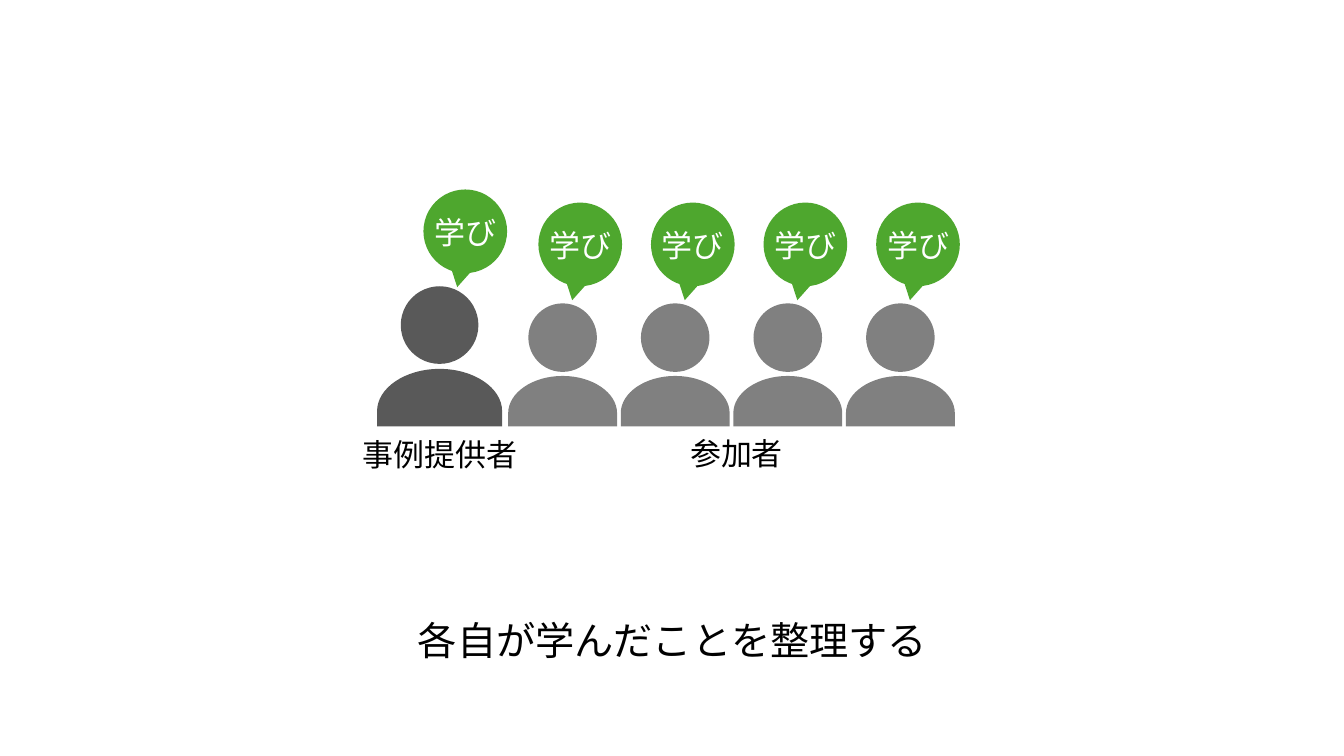
"""Build a slide of a case presenter and participants, each with a learning bubble."""
import lxml.etree
import pptx
import pptx.dml.color
import pptx.enum.shapes
import pptx.enum.text
import pptx.oxml.ns
import pptx.util

Inches = pptx.util.Inches
RGBColor = pptx.dml.color.RGBColor
MSO_SHAPE = pptx.enum.shapes.MSO_SHAPE
MSO_ANCHOR = pptx.enum.text.MSO_ANCHOR
qn = pptx.oxml.ns.qn

FONT = "Noto Sans CJK JP"
BLACK = RGBColor(0x00, 0x00, 0x00)
WHITE = RGBColor(0xFF, 0xFF, 0xFF)
DARK_GRAY = RGBColor(0x59, 0x59, 0x59)
GRAY = RGBColor(0x80, 0x80, 0x80)
GREEN = RGBColor(0x4E, 0xA7, 0x2E)
BASE = 4.23
ARC = 0.55


def paint(sp, color):
    sp.shadow.inherit = False
    sp.fill.solid()
    sp.fill.fore_color.rgb = color
    sp.line.fill.background()


def write(sp, text, size, color, spacing, anchor=MSO_ANCHOR.MIDDLE, top=0.0, side=0.12):
    tf = sp.text_frame
    tf.word_wrap = True
    tf.auto_size = pptx.enum.text.MSO_AUTO_SIZE.NONE
    tf.vertical_anchor = anchor
    tf.margin_left = tf.margin_right = Inches(side)
    tf.margin_top = Inches(top)
    tf.margin_bottom = Inches(0.05)
    p = tf.paragraphs[0]
    p.text = text
    p.alignment = pptx.enum.text.PP_ALIGN.CENTER
    p.line_spacing = spacing
    p.font.size = pptx.util.Pt(size)
    p.font.color.rgb = color
    p.font.name = FONT
    props = p._p.pPr.find(qn("a:defRPr"))
    lxml.etree.SubElement(props, qn("a:ea"), typeface=FONT)
    return p


prs = pptx.Presentation()
prs.slide_width = Inches(13.33)
prs.slide_height = Inches(7.5)
s = prs.slides.add_slide(prs.slide_layouts[5])

title = s.shapes.title
title.left, title.top = Inches(0.92), Inches(6.12)
title.width, title.height = Inches(11.5), Inches(0.6)
write(title, "各自が学んだことを整理する", 28, BLACK, 0.9, MSO_ANCHOR.TOP, 0.05, 0.1)

for text, x, y, w, h in [
    ("参加者", 6.3, 4.15, 2.01, 0.62),
    ("事例提供者", 3.38, 4.23, 1.97, 0.48),
]:
    label = s.shapes.add_textbox(Inches(x), Inches(y), Inches(w), Inches(h))
    write(label, text, 22.1, BLACK, 1.3)

people = [(4.36, 2.84, 0.77, 3.66, 1.24, 0.42, 4.2, 1.88, DARK_GRAY)]
for i in range(4):
    center = 5.58 + i * 3.35 / 3
    people.append((center, 3.01, 0.68, 3.73, 1.08, 0.37, center - 0.24, 2.01, GRAY))

for center, head_y, head, body_y, body_w, shoulder, bubble_x, bubble_y, color in people:
    sp = s.shapes.add_shape(MSO_SHAPE.OVAL, Inches(center - head / 2), Inches(head_y),
                            Inches(head), Inches(head))
    paint(sp, color)

    left, right = Inches(center - body_w / 2), Inches(center + body_w / 2)
    shoulder_y = Inches(body_y + shoulder)
    builder = s.shapes.build_freeform(left, Inches(BASE))
    builder.add_line_segments([(left, shoulder_y), (Inches(center), Inches(body_y)),
                               (right, shoulder_y), (right, Inches(BASE))], close=True)
    body = builder.convert_to_shape()
    paint(body, color)
    half, rise = Inches(body_w / 2), Inches(shoulder)
    near, far = round(half * (1 - ARC)), round(half * (1 + ARC))
    bend = round(rise * (1 - ARC))
    segments = list(body._element.iter(qn("a:lnTo")))
    for segment, controls in [
        (segments[1], [(0, bend), (near, 0)]),
        (segments[2], [(far, 0), (2 * half, bend)]),
    ]:
        segment.tag = qn("a:cubicBezTo")
        for n, (x, y) in enumerate(controls):
            segment.insert(n, segment.makeelement(qn("a:pt"), {"x": str(x), "y": str(y)}))

    bubble = s.shapes.add_shape(MSO_SHAPE.OVAL, Inches(bubble_x), Inches(bubble_y),
                                Inches(0.83), Inches(0.83))
    paint(bubble, GREEN)
    tail = s.shapes.add_shape(MSO_SHAPE.ISOSCELES_TRIANGLE, Inches(bubble_x + 0.24),
                              Inches(bubble_y + 0.77), Inches(0.23), Inches(0.2))
    tail.rotation = 191.9
    paint(tail, GREEN)
    word = s.shapes.add_textbox(Inches(bubble_x - 0.21), Inches(bubble_y + 0.1),
                                Inches(1.25), Inches(0.7))
    p = write(word, "学び", 22.1, WHITE, 1.0)
    p.space_after = pptx.util.Pt(14.8)

prs.save("out.pptx")
